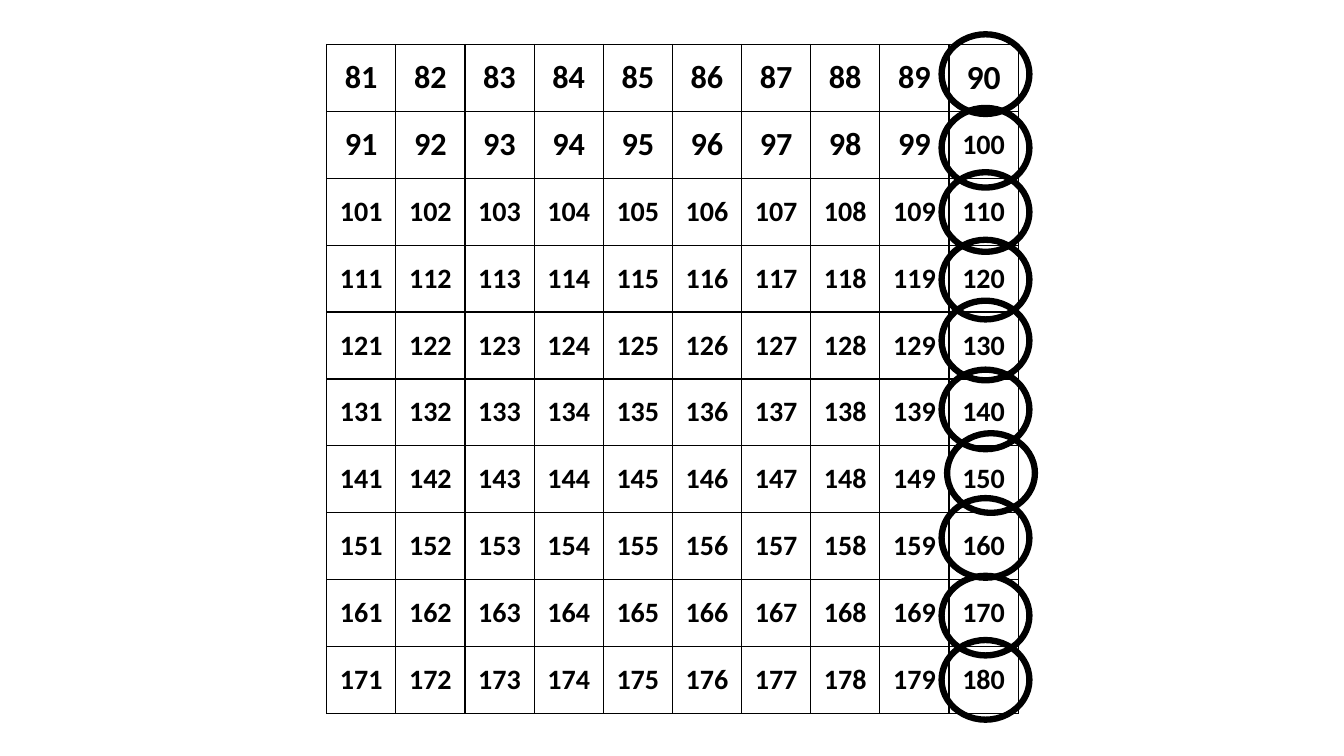
from lxml import etree
from pptx import Presentation
from pptx.dml.color import RGBColor
from pptx.enum.shapes import MSO_SHAPE
from pptx.enum.text import MSO_ANCHOR, PP_ALIGN
from pptx.oxml.ns import qn
from pptx.util import Inches, Pt

BLACK = RGBColor(0, 0, 0)
OVAL = MSO_SHAPE.OVAL
CENTER = PP_ALIGN.CENTER
BLANK_LAYOUT = 6

GRID_LEFT, GRID_TOP = 3.24, 0.44
GRID_WIDTH, GRID_HEIGHT = 6.86, 6.64
GRID_SIZE = 10
COLUMN, ROW = GRID_WIDTH / GRID_SIZE, GRID_HEIGHT / GRID_SIZE
FIRST_NUMBER = 81

CIRCLE_COLUMNS, CIRCLE_ROWS = 1.27, 1.19
CIRCLE_COLUMN = 8.89
CIRCLE_POSITIONS = [
    (CIRCLE_COLUMN, -0.15),
    (CIRCLE_COLUMN, 0.95),
    (CIRCLE_COLUMN, 1.91),
    (CIRCLE_COLUMN, 2.92),
    (CIRCLE_COLUMN, 3.83),
    (CIRCLE_COLUMN, 4.86),
    (8.97, 5.81),
    (CIRCLE_COLUMN, 6.78),
    (CIRCLE_COLUMN, 7.94),
    (CIRCLE_COLUMN, 8.9),
]

CELL_FORMAT = {
    "vertical_anchor": MSO_ANCHOR.MIDDLE,
    "margin_left": Inches(0.13),
    "margin_right": Inches(0.13),
    "margin_top": Inches(0.06),
    "margin_bottom": Inches(0.06),
}
FONT_FORMAT = {"name": "Calibri", "bold": True}


def apply_format(target, values):
    for name, value in values.items():
        setattr(target, name, value)


def number_size(number):
    if number >= 100:
        return Pt(20)
    return Pt(24) if number == 90 else Pt(23)


def add_borders(cell, color, width):
    properties = cell._tc.get_or_add_tcPr()
    for index, side in enumerate(("a:lnL", "a:lnR", "a:lnT", "a:lnB")):
        line = etree.Element(qn(side), w=str(width))
        fill = etree.SubElement(line, qn("a:solidFill"))
        etree.SubElement(fill, qn("a:srgbClr"), val=str(color))
        properties.insert(index, line)


def fill_cell(cell, number):
    apply_format(cell, CELL_FORMAT)
    cell.fill.background()
    add_borders(cell, BLACK, Pt(1))
    paragraph = cell.text_frame.paragraphs[0]
    paragraph.alignment = CENTER
    run = paragraph.add_run()
    run.text = str(number)
    apply_format(run.font, {**FONT_FORMAT, "size": number_size(number)})
    run.font.color.rgb = BLACK


def add_number_grid(slide):
    table = slide.shapes.add_table(
        GRID_SIZE, GRID_SIZE, Inches(GRID_LEFT), Inches(GRID_TOP),
        Inches(GRID_WIDTH), Inches(GRID_HEIGHT)).table
    apply_format(table, {"first_row": False, "horz_banding": False})
    for column in table.columns:
        column.width = Inches(COLUMN)
    for row in table.rows:
        row.height = Inches(ROW)
    for number, cell in enumerate(table.iter_cells(), FIRST_NUMBER):
        fill_cell(cell, number)


def add_circle(slide, column, row):
    circle = slide.shapes.add_shape(
        OVAL, Inches(GRID_LEFT + column * COLUMN), Inches(GRID_TOP + row * ROW),
        Inches(CIRCLE_COLUMNS * COLUMN), Inches(CIRCLE_ROWS * ROW))
    circle.shadow.inherit = False
    circle.fill.background()
    circle.line.color.rgb = BLACK
    circle.line.width = Pt(4.5)


def main():
    presentation = Presentation()
    apply_format(presentation, {"slide_width": Inches(13.33), "slide_height": Inches(7.5)})
    slide = presentation.slides.add_slide(presentation.slide_layouts[BLANK_LAYOUT])
    add_number_grid(slide)
    for column, row in CIRCLE_POSITIONS:
        add_circle(slide, column, row)
    presentation.save("out.pptx")


if __name__ == "__main__":
    main()
